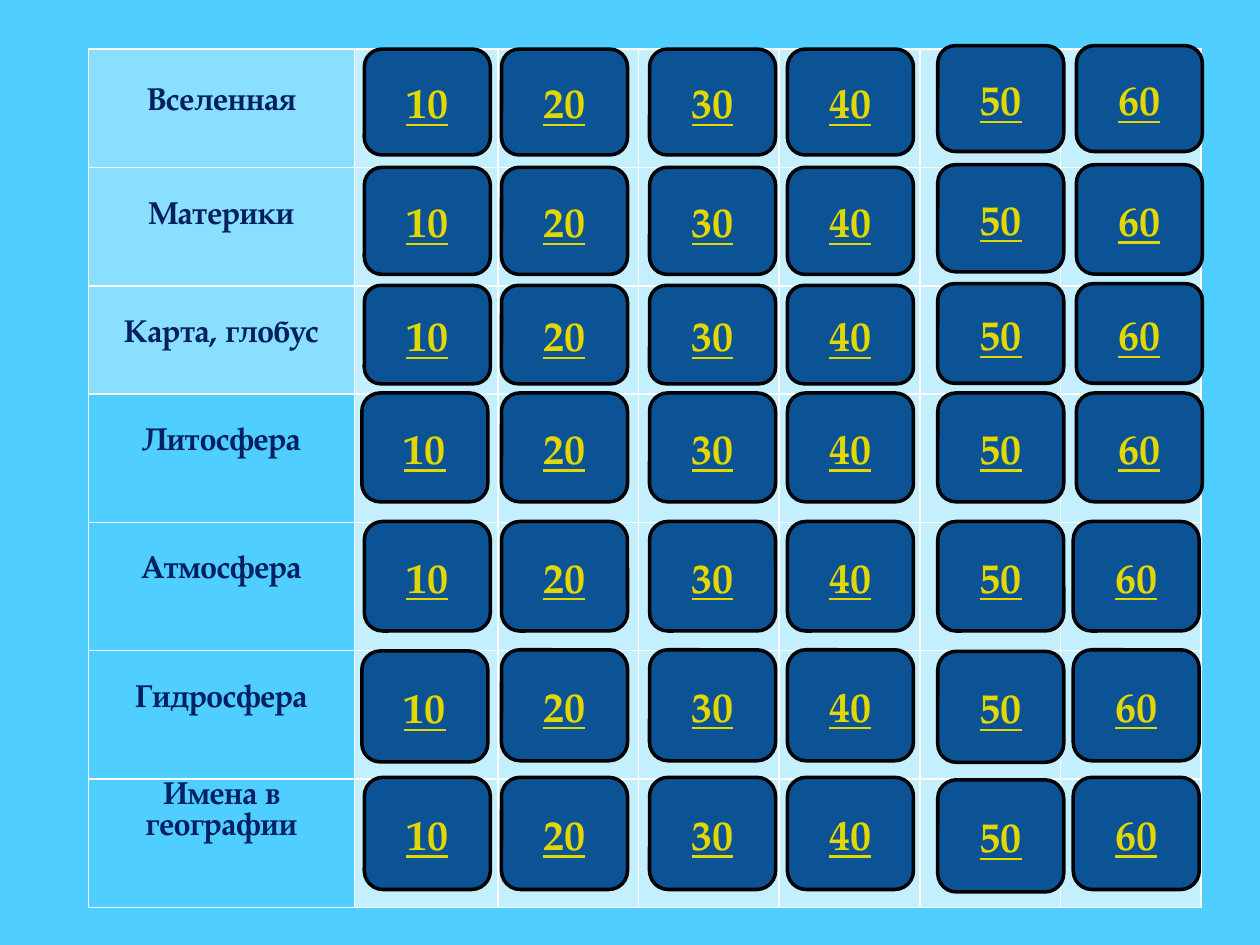
from dataclasses import dataclass

from lxml.etree import SubElement
from pptx import Presentation
from pptx.dml.color import RGBColor
from pptx.enum.shapes import MSO_SHAPE
from pptx.enum.text import MSO_ANCHOR, PP_ALIGN
from pptx.oxml.ns import qn
from pptx.slide import Slide
from pptx.table import _Cell
from pptx.util import Pt


@dataclass(frozen=True)
class Theme:
    font: str = "TeX Gyre Pagella"
    background: str = "4FCEFF"
    light_topic: str = "8ADFFF"
    score_cell: str = "C4EFFF"
    grid: str = "FFFFFF"
    topic_text: str = "002060"
    button: str = "0B5394"
    button_line: str = "000000"
    button_text: str = "E2D700"
    topic_size: float = 18
    button_size: float = 24


@dataclass(frozen=True)
class Topic:
    name: str
    row_height: float
    fill: str
    text_top: float
    button_top: float
    button_height: float


@dataclass(frozen=True)
class Nudge:
    """Small departure of one button from the regular grid."""
    x: float = 0
    y: float = 0
    height: float = 0


THEME = Theme()
TABLE_LEFT, TABLE_TOP = 50.6, 28.1
TOPIC_WIDTH = 151.9
TOPIC_MARGIN = 5
SCORE_WIDTHS = [82] + [80.4] * 5
BUTTON_WIDTH = 72
SCORE_LEFTS = {10: 208.2, 20: 286.6, 30: 371.2, 40: 450, 50: 535.9, 60: 615.1}

TOPICS = [
    Topic("Вселенная", 67.7, THEME.light_topic, 22.3, 28.1, 60.5),
    Topic("Материки", 67.7, THEME.light_topic, 19.3, 95.6, 61.2),
    Topic("Карта, глобус", 61.6, THEME.light_topic, 19.3, 163.1, 56.2),
    Topic("Литосфера", 73.4, THEME.background, 19.3, 224.6, 62.2),
    Topic("Атмосфера", 73.4, THEME.background, 19.3, 298, 62.6),
    Topic("Гидросфера", 73.4, THEME.background, 19.3, 371.3, 63.4),
    Topic("Имена в географии", 73.4, THEME.background, 1.6, 444.2, 64.1),
]

NUDGES = {
    ("Вселенная", 50): Nudge(y=-2),
    ("Вселенная", 60): Nudge(y=-2),
    ("Материки", 50): Nudge(y=-1.5),
    ("Материки", 60): Nudge(y=-1.5, height=1.4),
    ("Карта, глобус", 50): Nudge(y=-1, height=0.7),
    ("Карта, глобус", 60): Nudge(y=-1, height=0.7),
    ("Литосфера", 10): Nudge(x=-1.4),
    ("Атмосфера", 60): Nudge(x=-1.8),
    ("Гидросфера", 10): Nudge(x=-1.4, y=0.7),
    ("Гидросфера", 50): Nudge(y=0.9),
    ("Гидросфера", 60): Nudge(x=-1.8),
    ("Имена в географии", 50): Nudge(y=1.4),
    ("Имена в географии", 60): Nudge(x=-1.8),
}


def rgb(value: str) -> RGBColor:
    return RGBColor.from_string(value)


def add_bold_run(paragraph, text: str, size: float, color: str,
                 underline: bool = False) -> None:
    paragraph.alignment = PP_ALIGN.CENTER
    run = paragraph.add_run()
    run.text = text
    run.font.name = THEME.font
    run.font.size = Pt(size)
    run.font.bold = True
    run.font.underline = underline
    run.font.color.rgb = rgb(color)


def style_cell(cell: _Cell, fill: str) -> None:
    """Give a cell white borders and a solid fill."""
    properties = cell._tc.get_or_add_tcPr()
    for side in ("a:lnL", "a:lnR", "a:lnT", "a:lnB"):
        border = SubElement(properties, qn(side), w=str(Pt(1)))
        solid = SubElement(border, qn("a:solidFill"))
        SubElement(solid, qn("a:srgbClr"), val=THEME.grid)
    cell.fill.solid()
    cell.fill.fore_color.rgb = rgb(fill)


def add_topic_table(slide: Slide) -> None:
    widths = [TOPIC_WIDTH, *SCORE_WIDTHS]
    table = slide.shapes.add_table(
        len(TOPICS), len(widths), Pt(TABLE_LEFT), Pt(TABLE_TOP),
        Pt(sum(widths)), Pt(sum(topic.row_height for topic in TOPICS))).table
    table.first_row = table.horz_banding = False
    for column, width in zip(table.columns, widths):
        column.width = Pt(width)
    for row, topic in zip(table.rows, TOPICS):
        row.height = Pt(topic.row_height)
        topic_cell, *score_cells = row.cells
        style_cell(topic_cell, topic.fill)
        topic_cell.margin_top = Pt(topic.text_top)
        topic_cell.margin_left = topic_cell.margin_right = Pt(TOPIC_MARGIN)
        add_bold_run(topic_cell.text_frame.paragraphs[0], topic.name,
                     THEME.topic_size, THEME.topic_text)
        for cell in score_cells:
            style_cell(cell, THEME.score_cell)


def add_score_button(slide: Slide, topic: Topic, score: int) -> None:
    nudge = NUDGES.get((topic.name, score), Nudge())
    button = slide.shapes.add_shape(
        MSO_SHAPE.ROUNDED_RECTANGLE,
        Pt(SCORE_LEFTS[score] + nudge.x), Pt(topic.button_top + nudge.y),
        Pt(BUTTON_WIDTH), Pt(topic.button_height + nudge.height))
    button.shadow.inherit = False
    button.fill.solid()
    button.fill.fore_color.rgb = rgb(THEME.button)
    button.line.color.rgb = rgb(THEME.button_line)
    button.line.width = Pt(2)
    button.text_frame.vertical_anchor = MSO_ANCHOR.MIDDLE
    add_bold_run(button.text_frame.paragraphs[0], str(score),
                 THEME.button_size, THEME.button_text, underline=True)


def main() -> None:
    presentation = Presentation()
    presentation.slide_width, presentation.slide_height = Pt(720), Pt(540)
    slide = presentation.slides.add_slide(presentation.slide_layouts[6])
    slide.background.fill.solid()
    slide.background.fill.fore_color.rgb = rgb(THEME.background)
    add_topic_table(slide)
    for topic in TOPICS:
        for score in SCORE_LEFTS:
            add_score_button(slide, topic, score)
    presentation.save("out.pptx")


if __name__ == "__main__":
    main()
